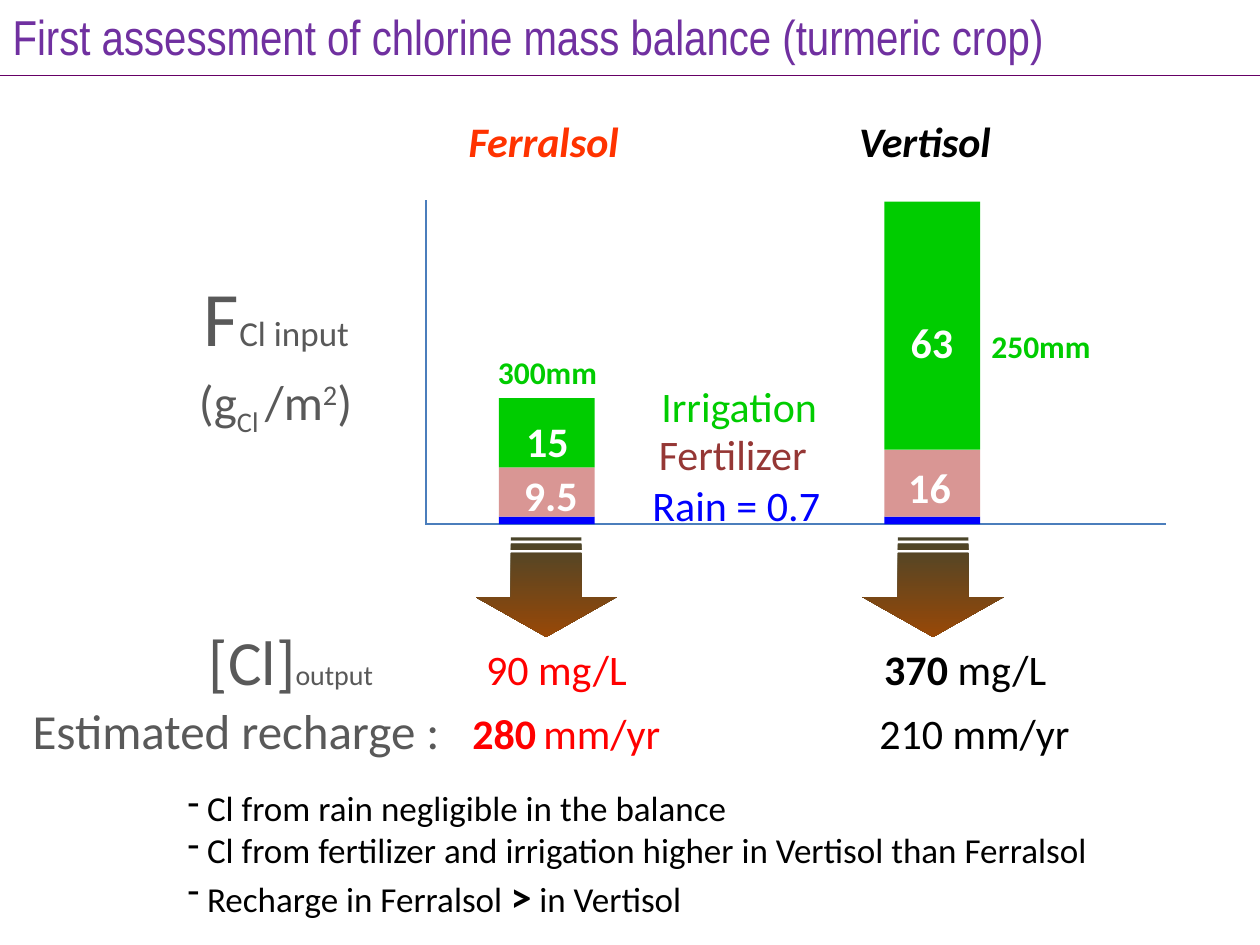
from lxml.etree import SubElement
from pptx import Presentation
from pptx.dml.color import RGBColor
from pptx.enum.shapes import MSO_CONNECTOR, MSO_SHAPE
from pptx.enum.text import MSO_ANCHOR, PP_ALIGN
from pptx.oxml.ns import qn
from pptx.util import Inches, Pt

COLORS = {
    "title": "7030A0", "rule": "660066", "axis": "4B7EBC", "gray": "595959",
    "black": "000000", "white": "FFFFFF", "red": "FF0000", "orange": "FF3300",
    "water": "00CC00", "pink": "D99694", "brown": "953735", "rain": "0000FF",
    "dark": "4A452A", "earth": "984807",
}


class Deck:
    def __init__(self, show, font="Calibri"):
        self.slide = show.slides.add_slide(show.slide_layouts[5])
        self.shapes = self.slide.shapes
        self.font = font

    def color(self, name):
        return RGBColor.from_string(COLORS[name])

    def place(self, shape, left, top, width, height):
        shape.left, shape.top = Inches(left), Inches(top)
        shape.width, shape.height = Inches(width), Inches(height)

    def run(self, para, text, size, color, style="", base=0, font=None):
        run = para.add_run()
        run.text = text
        run.font.name = font or self.font
        run.font.size = Pt(size)
        run.font.bold = "b" in style
        run.font.italic = "i" in style
        run.font.color.rgb = self.color(color)
        if base:
            run._r.get_or_add_rPr().set("baseline", str(base * 1000))

    def title(self, text, font):
        box = self.shapes.title
        self.place(box, 0, 0, 9.95, 0.57)
        frame = box.text_frame
        frame.vertical_anchor = MSO_ANCHOR.TOP
        para = frame.paragraphs[0]
        para.alignment = PP_ALIGN.LEFT
        props = para._p.get_or_add_pPr()
        props.set("marL", str(Inches(0.19)))
        props.set("indent", str(-Inches(0.19)))
        self.run(para, text, 28, "title", font=font)

    def text(self, at, *paras, align=PP_ALIGN.LEFT, gap=None, tabs=(), bullet=None):
        frame = self.shapes.add_textbox(*map(Inches, at)).text_frame
        frame.word_wrap = True
        for i, runs in enumerate(paras):
            para = frame.add_paragraph() if i else frame.paragraphs[0]
            para.alignment = align
            if gap:
                para.line_spacing = gap
            props = para._p.get_or_add_pPr()
            if bullet:
                SubElement(props, qn("a:buChar")).set("char", bullet)
            if tabs:
                stops = SubElement(props, qn("a:tabLst"))
                for pos in tabs:
                    stop = SubElement(stops, qn("a:tab"))
                    stop.set("pos", str(Inches(pos)))
                    stop.set("algn", "l")
            for run in runs:
                self.run(para, *run)

    def line(self, start, end, color):
        line = self.shapes.add_connector(
            MSO_CONNECTOR.STRAIGHT, *map(Inches, start + end))
        line.line.color.rgb = self.color(color)
        line.line.width = Pt(0.75)
        SubElement(line._element.spPr, qn("a:effectLst"))

    def shape(self, kind, at):
        shape = self.shapes.add_shape(kind, *map(Inches, at))
        shape.shadow.inherit = False
        shape.line.fill.background()
        return shape

    def stack(self, left, base, parts):
        for color, height in parts:
            base -= height
            bar = self.shape(MSO_SHAPE.RECTANGLE, (left, base, 0.76, height))
            bar.fill.solid()
            bar.fill.fore_color.rgb = self.color(color)

    def arrow(self, left):
        arrow = self.shape(MSO_SHAPE.STRIPED_RIGHT_ARROW, (left, 4.1, 0.79, 1.12))
        arrow.rotation = 90
        arrow.adjustments[0] = 0.5
        arrow.adjustments[1] = 0.4
        arrow.fill.gradient()
        arrow.fill.gradient_angle = 0
        for stop, color in zip(arrow.fill.gradient_stops, ("dark", "earth")):
            stop.color.rgb = self.color(color)


def main():
    show = Presentation()
    show.slide_width, show.slide_height = Inches(10), Inches(7.5)
    deck = Deck(show)
    deck.title("First assessment of chlorine mass balance (turmeric crop)", "Arial Narrow")
    deck.line((0, 0.6), (10, 0.6), "rule")

    deck.line((3.38, 1.59), (3.38, 4.17), "axis")
    deck.line((9.25, 4.16), (3.39, 4.16), "axis")
    for left, feed, water in ((3.96, 0.39, 0.55), (7.02, 0.53, 1.97)):
        deck.stack(left, 4.16, (("rain", 0.06), ("pink", feed), ("water", water)))
    for left in (3.94, 7.01):
        deck.arrow(left)

    labels = (
        ((3.62, 0.87, 3.11, 0.5), "Ferralsol", "orange", "bi"),
        ((6.72, 0.87, 1.98, 0.5), "Vertisol", "black", "bi"),
        ((5.13, 3.35, 1.62, 0.5), "Fertilizer", "brown", ""),
        ((5.08, 3.76, 2.36, 0.5), "Rain = 0.7", "rain", ""),
        ((4.06, 3.68, 0.71, 0.47), "9.5", "white", "b"),
        ((7.11, 3.61, 0.69, 0.47), "16", "white", "b"),
    )
    for at, text, color, style in labels:
        deck.text(at, [(text, 24, color, style)])
    deck.text((5.15, 2.77, 2.78, 0.64), [("Irrigation", 24, "water")], gap=1.5)
    deck.text((3.69, 2.6, 1.31, 1.08),
              [("300mm", 18, "water", "b")], [("15", 24, "white", "b")],
              align=PP_ALIGN.CENTER, gap=1.5)
    deck.text((7.13, 2.26, 2.54, 0.6),
              [("63\t", 24, "white", "b"), ("250mm", 18, "water", "b")],
              gap=1.5, tabs=(0.64,))

    deck.text((1.52, 2.09, 1.7, 0.84),
              [("F", 44, "gray"), ("Cl input", 20, "gray")])
    deck.text((1.48, 2.9, 1.58, 0.57),
              [("(g", 28, "gray"), ("Cl ", 28, "gray", "", -25), ("/m", 28, "gray"),
               ("2", 28, "gray", "", 30), (")", 28, "gray")])
    deck.text((1.56, 4.89, 7.26, 0.71),
              [("[Cl]", 36, "gray"), ("output", 16, "gray"),
               ("\t90 mg/L", 24, "red"), ("\t370", 24, "black", "b"),
               (" mg/L", 24, "black")], tabs=(2.2, 5.36))
    deck.text((0.16, 5.51, 9.05, 0.57),
              [("Estimated recharge :", 28, "gray"), ("\t280", 24, "red", "b"),
               (" ", 18, "red"), ("mm/yr", 24, "red"),
               ("\t210 mm/yr", 24, "black")], tabs=(3.49, 6.72))
    deck.text((1.39, 6.19, 9.23, 1.18),
              [(" Cl from rain negligible in the balance", 20, "black")],
              [(" Cl from fertilizer and irrigation higher in Vertisol than Ferralsol",
                20, "black")],
              [(" Recharge in Ferralsol ", 20, "black"), (">", 24, "black", "b"),
               (" in Vertisol", 20, "black")], bullet="-")
    show.save("out.pptx")


if __name__ == "__main__":
    main()
